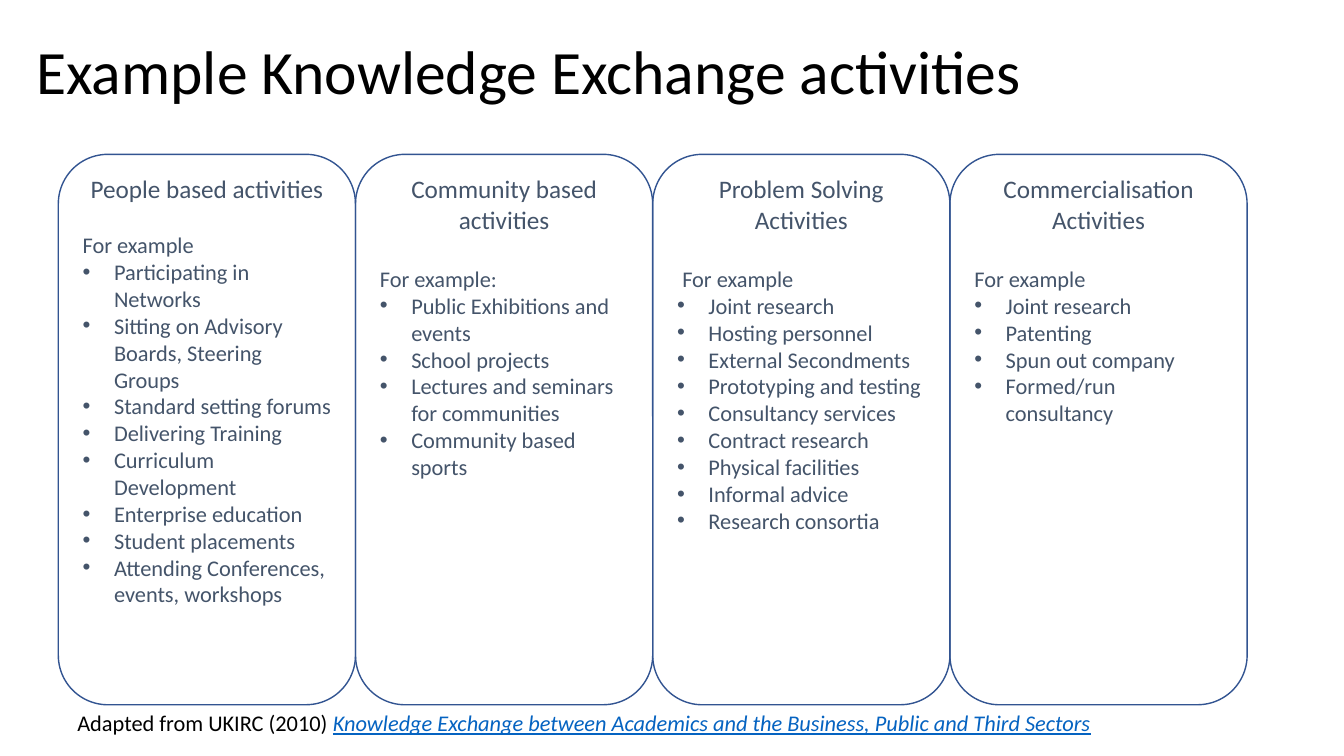
from dataclasses import dataclass

from lxml import etree
from pptx import Presentation
from pptx.dml.color import RGBColor
from pptx.enum import shapes, text
from pptx.oxml import ns
from pptx.util import Cm, Length, Pt

FONT = "Calibri"
BLACK, SLATE, OUTLINE, LINK = "000000", "44546A", "325491", "0563C1"
CARD_LEFT, CARD_TOP, CARD_WIDTH, CARD_HEIGHT = Cm(1.47), Cm(3.89), Cm(7.49), Cm(13.87)
BULLET_INDENT = Cm(0.79)


@dataclass
class Activity:
    heading: str
    intro: str
    examples: list[str]
    intro_gap: float = 22
    intro_indent: Length = Cm(0)


ACTIVITIES = [
    Activity("People based activities", "For example", [
        "Participating in Networks",
        "Sitting on Advisory Boards, Steering Groups",
        "Standard setting forums",
        "Delivering Training",
        "Curriculum Development",
        "Enterprise education",
        "Student placements",
        "Attending Conferences, events, workshops",
    ], intro_gap=19.5),
    Activity("Community based activities", "For example:", [
        "Public Exhibitions and events",
        "School projects",
        "Lectures and seminars for communities",
        "Community based sports",
    ]),
    Activity("Problem Solving Activities", "For example", [
        "Joint research",
        "Hosting personnel",
        "External Secondments",
        "Prototyping and testing",
        "Consultancy services",
        "Contract research",
        "Physical facilities",
        "Informal advice",
        "Research consortia",
    ], intro_indent=Cm(0.13)),
    Activity("Commercialisation Activities", "For example", [
        "Joint research",
        "Patenting",
        "Spun out company",
        "Formed/run consultancy",
    ]),
]


def rgb(colour: str) -> RGBColor:
    return RGBColor.from_string(colour)


def style(font, size: float, colour: str) -> None:
    font.name, font.size = FONT, Pt(size)
    font.color.rgb = rgb(colour)


def set_indent(paragraph, left: Length, first: Length = Cm(0)) -> None:
    properties = paragraph._p.get_or_add_pPr()
    properties.set("marL", str(left))
    properties.set("indent", str(first))


def add_bullet(paragraph) -> None:
    set_indent(paragraph, BULLET_INDENT, -BULLET_INDENT)
    properties = paragraph._p.get_or_add_pPr()
    etree.SubElement(properties, ns.qn("a:buFont")).set("typeface", "Arial")
    etree.SubElement(properties, ns.qn("a:buChar")).set("char", "•")


def add_line(frame, wording: str, size: float, align=text.PP_ALIGN.LEFT):
    """Append a paragraph, using the frame's first one while it is empty."""
    first = frame.paragraphs[0]
    paragraph = frame.add_paragraph() if first.text else first
    paragraph.text = wording
    paragraph.alignment = align
    style(paragraph.runs[0].font, size, SLATE)
    return paragraph


def add_card(slide, activity: Activity, column: int) -> None:
    card = slide.shapes.add_shape(
        shapes.MSO_SHAPE.ROUNDED_RECTANGLE,
        CARD_LEFT + column * CARD_WIDTH, CARD_TOP, CARD_WIDTH, CARD_HEIGHT)
    card.shadow.inherit = False
    card.fill.background()
    card.line.color.rgb = rgb(OUTLINE)
    card.line.width = Pt(1)
    frame = card.text_frame
    frame.word_wrap = True
    frame.vertical_anchor = text.MSO_ANCHOR.TOP
    add_line(frame, activity.heading, 18, text.PP_ALIGN.CENTER)
    intro = add_line(frame, activity.intro, 16)
    intro.space_before = Pt(activity.intro_gap)
    set_indent(intro, activity.intro_indent)
    for example in activity.examples:
        add_bullet(add_line(frame, example, 16))


def add_title(slide, wording: str) -> None:
    title = slide.shapes.title
    title.left, title.top, title.width, title.height = Cm(0.66), Cm(0.81), Cm(28.78), Cm(2.13)
    frame = title.text_frame
    frame.text = wording
    frame.word_wrap = True
    frame.auto_size = text.MSO_AUTO_SIZE.NONE
    frame.vertical_anchor = text.MSO_ANCHOR.MIDDLE
    heading = frame.paragraphs[0]
    heading.alignment = text.PP_ALIGN.LEFT
    heading.line_spacing = 0.9
    style(heading.runs[0].font, 44, BLACK)


def add_citation(slide, lead: str, work: str) -> None:
    citation = slide.shapes.add_textbox(Cm(1.7), Cm(17.75), Cm(32), Cm(0.94))
    citation.text_frame.word_wrap = True
    paragraph = citation.text_frame.paragraphs[0]
    for wording, colour in ((lead, BLACK), (work, LINK)):
        run = paragraph.add_run()
        run.text = wording
        style(run.font, 16, colour)
    run.font.italic = run.font.underline = True


def main() -> None:
    deck = Presentation()
    deck.slide_width, deck.slide_height = Cm(33.87), Cm(19.05)
    slide = deck.slides.add_slide(deck.slide_layouts.get_by_name("Title Only"))
    add_title(slide, "Example Knowledge Exchange activities")
    for column, activity in enumerate(ACTIVITIES):
        add_card(slide, activity, column)
    add_citation(
        slide, "Adapted from UKIRC (2010) ",
        "Knowledge Exchange between Academics and the Business, Public and Third Sectors")
    deck.save("out.pptx")


if __name__ == "__main__":
    main()
